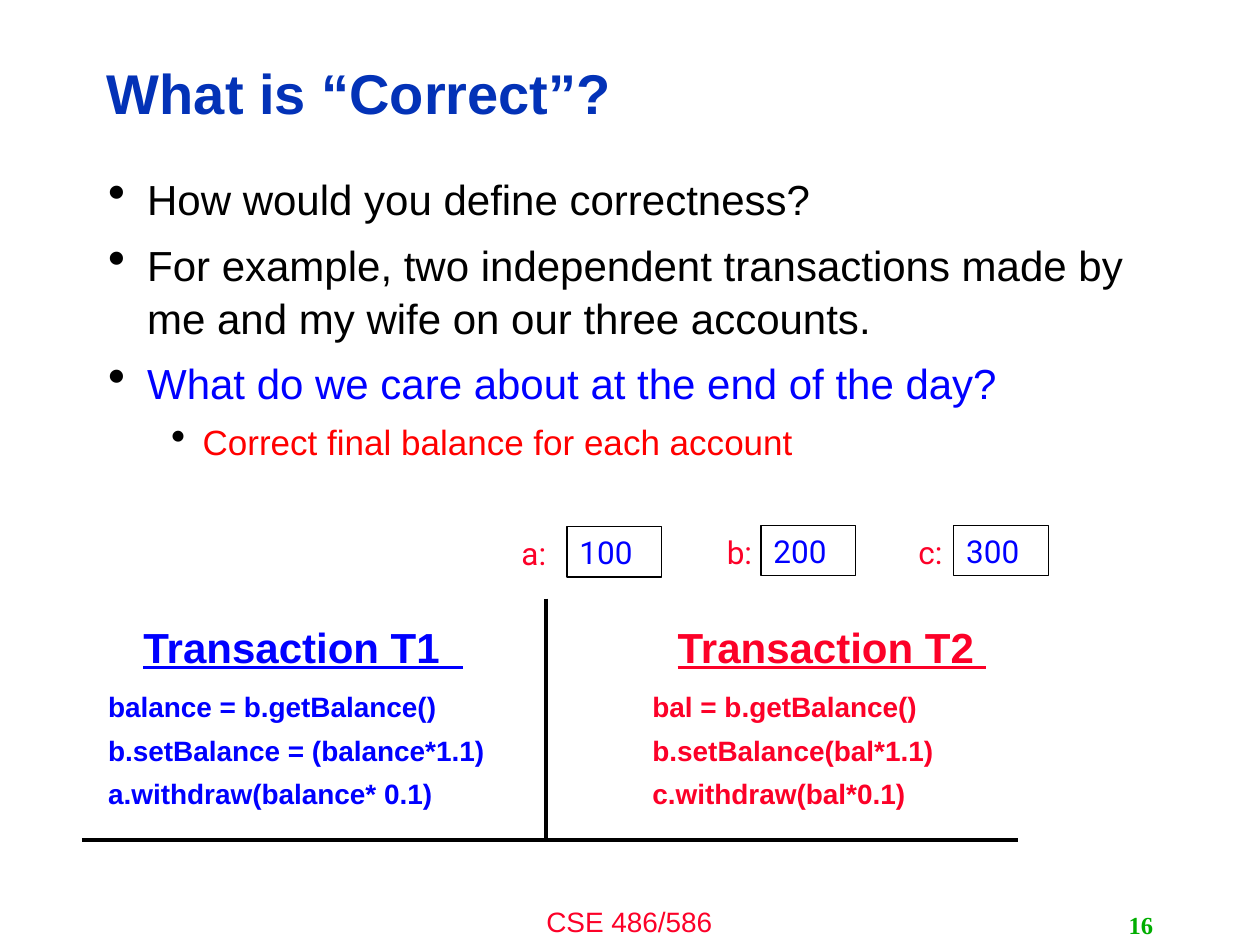
from lxml.etree import SubElement
from pptx import Presentation
from pptx.dml.color import RGBColor
from pptx.enum.shapes import MSO_CONNECTOR, MSO_SHAPE
from pptx.enum.text import MSO_ANCHOR, PP_ALIGN
from pptx.oxml.ns import qn
from pptx.util import Inches, Pt

COLORS = {
    "title": "0332B7",
    "black": "000000",
    "blue": "0000FF",
    "red": "FC0128",
    "answer": "FF0000",
    "number": "00AE00",
}
BULLETS = [
    ("How would you define correctness?", "black", 0),
    ("For example, two independent transactions made by me and my wife on our three accounts.", "black", 0),
    ("What do we care about at the end of the day?", "blue", 0),
    ("Correct final balance for each account", "answer", 1),
]
LEVELS = [
    {"size": 24, "margin": 0.31, "hanging": 0.31},
    {"size": 20, "margin": 0.75, "hanging": 0.25},
]
ACCOUNTS = [("a:", "100", 4.04, 4.5, 4.18), ("b:", "200", 5.67, 6.04, 4.17), ("c:", "300", 7.19, 7.57, 4.17)]
TRANSACTIONS = [
    {
        "heading": "Transaction T1  ",
        "color": "blue",
        "heading_left": 1.04,
        "code_left": 0.76,
        "code": ["balance = b.getBalance()", "b.setBalance = (balance*1.1)", "a.withdraw(balance* 0.1)"],
    },
    {
        "heading": "\tTransaction T2 ",
        "color": "red",
        "heading_left": 4.07,
        "code_left": 5.08,
        "code": ["bal = b.getBalance()", "b.setBalance(bal*1.1)", "c.withdraw(bal*0.1)"],
    },
]
LINE_SPACING = 1.05
SPACE_SHARE = 0.3


def rgb(name):
    return RGBColor.from_string(COLORS[name])


def apply(target, values):
    for name, value in values.items():
        setattr(target, name, value)


def add_box(slide, left, top, width, height, **frame_format):
    box = slide.shapes.add_textbox(Inches(left), Inches(top), Inches(width), Inches(height))
    apply(box.text_frame, {"word_wrap": True} | frame_format)
    return box


def write(para, text, color, size, font="Arial", para_format=None, **font_format):
    apply(para, para_format or {})
    span = para.add_run()
    span.text = text
    apply(span.font, {"name": font, "size": Pt(size)} | font_format)
    span.font.color.rgb = rgb(color)


def next_para(frame, position):
    return frame.add_paragraph() if position else frame.paragraphs[0]


def spacing(size):
    return {"line_spacing": LINE_SPACING, "space_before": Pt(round(size * SPACE_SHARE, 1))}


def add_bullet_mark(para, level):
    props = para._p.get_or_add_pPr()
    props.set("marL", str(Inches(level["margin"])))
    props.set("indent", str(-Inches(level["hanging"])))
    color = SubElement(props, qn("a:buClr"))
    SubElement(color, qn("a:srgbClr"), val=COLORS["black"])
    SubElement(props, qn("a:buSzPct"), val="120000")
    SubElement(props, qn("a:buChar"), char="•")


def add_tab_stop(para, position):
    stops = SubElement(para._p.get_or_add_pPr(), qn("a:tabLst"))
    SubElement(stops, qn("a:tab"), pos=str(Inches(position)), algn="l")


def add_bullets(slide):
    frame = add_box(slide, 0.76, 1.31, 8.4, 2.5).text_frame
    for position, (text, color, depth) in enumerate(BULLETS):
        level = LEVELS[depth]
        para = next_para(frame, position)
        para.level = depth
        write(para, text, color, level["size"], para_format=spacing(level["size"]))
        add_bullet_mark(para, level)


def add_account(slide, label, amount, label_left, left, top):
    cell = slide.shapes.add_shape(MSO_SHAPE.RECTANGLE, Inches(left), Inches(top), Inches(0.75), Inches(0.4))
    cell.shadow.inherit = False
    cell.fill.background()
    cell.line.color.rgb = rgb("black")
    cell.line.width = Pt(0.75)
    cell.text_frame.vertical_anchor = MSO_ANCHOR.TOP
    write(cell.text_frame.paragraphs[0], amount, "blue", 18, "Roboto", {"alignment": PP_ALIGN.LEFT})
    box = add_box(slide, label_left, top + 0.01, 0.56, 0.37)
    write(box.text_frame.paragraphs[0], label, "red", 18, "Roboto")


def add_transaction(slide, transaction):
    color = transaction["color"]
    heading = add_box(slide, transaction["heading_left"], 4.88, 4, 0.5).text_frame.paragraphs[0]
    write(heading, transaction["heading"], color, 24, bold=True, underline=True)
    add_tab_stop(heading, 1.21)
    frame = add_box(slide, transaction["code_left"], 5.41, 3.5, 1.1).text_frame
    for position, text in enumerate(transaction["code"]):
        write(next_para(frame, position), text, color, 16, para_format=spacing(16), bold=True)


def add_rule(slide, *ends):
    rule = slide.shapes.add_connector(MSO_CONNECTOR.STRAIGHT, *map(Inches, ends))
    rule.line.color.rgb = rgb("black")
    rule.line.width = Pt(2.25)
    SubElement(rule._element.spPr, qn("a:effectLst"))


def main():
    deck = Presentation()
    apply(deck, {"slide_width": Inches(10), "slide_height": Inches(7.5)})
    slide = deck.slides.add_slide(deck.slide_layouts[6])

    title = add_box(slide, 0.75, 0.36, 7.98, 0.81, vertical_anchor=MSO_ANCHOR.MIDDLE)
    write(title.text_frame.paragraphs[0], "What is “Correct”?", "title", 32,
          para_format={"line_spacing": 0.9}, bold=True)
    add_bullets(slide)
    for account in ACCOUNTS:
        add_account(slide, *account)
    for transaction in TRANSACTIONS:
        add_transaction(slide, transaction)
    add_rule(slide, 4.33, 4.75, 4.33, 6.67)
    add_rule(slide, 0.65, 6.67, 8.08, 6.67)

    footer = add_box(slide, 3.33, 7.13, 3.33, 0.37)
    write(footer.text_frame.paragraphs[0], "CSE 486/586", "red", 16, para_format={"alignment": PP_ALIGN.CENTER})
    number = add_box(slide, 7.17, 7.18, 2.08, 0.32, vertical_anchor=MSO_ANCHOR.MIDDLE)
    write(number.text_frame.paragraphs[0], "16", "number", 14, "Times New Roman",
          {"alignment": PP_ALIGN.RIGHT}, bold=True)
    deck.save("out.pptx")


if __name__ == "__main__":
    main()
